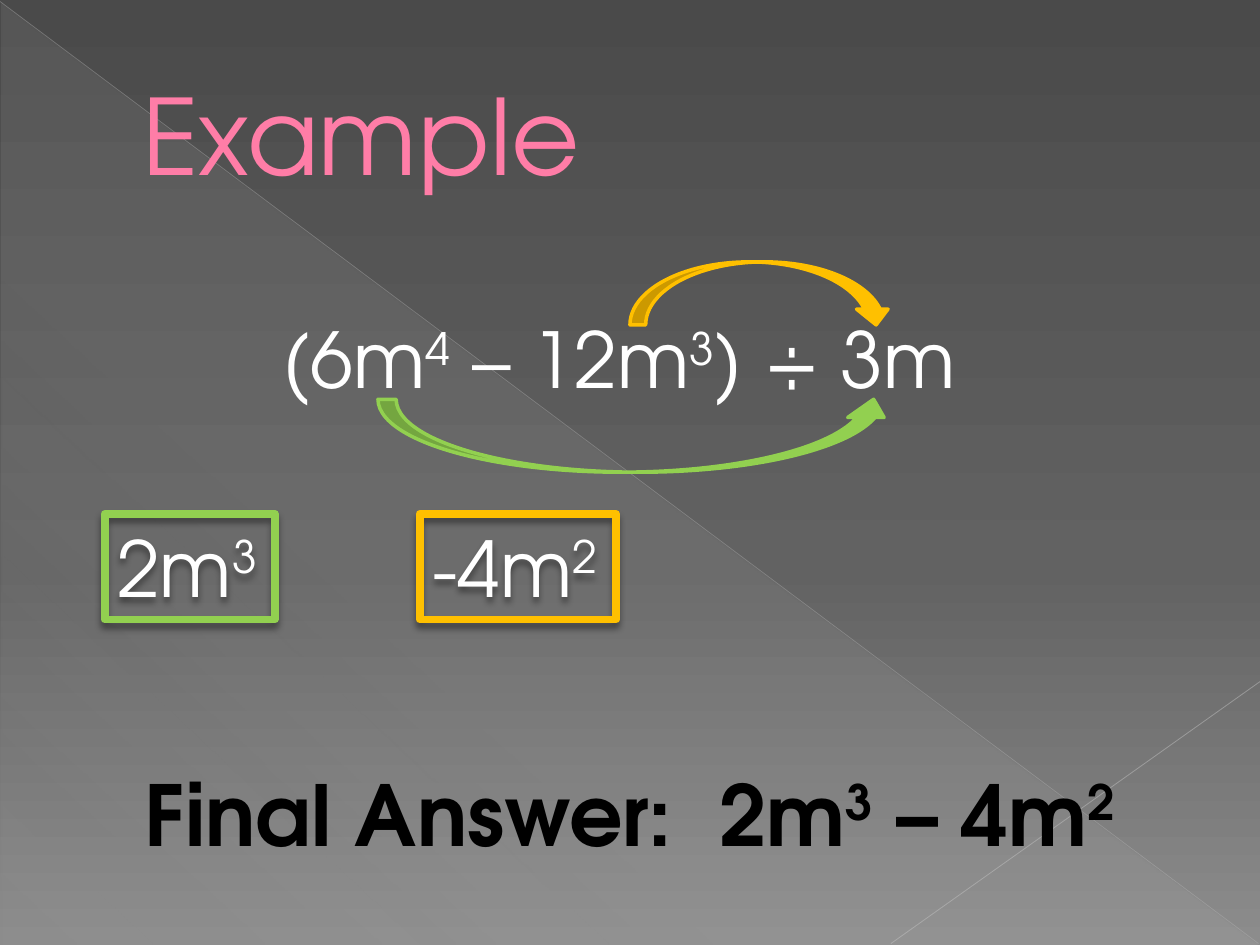
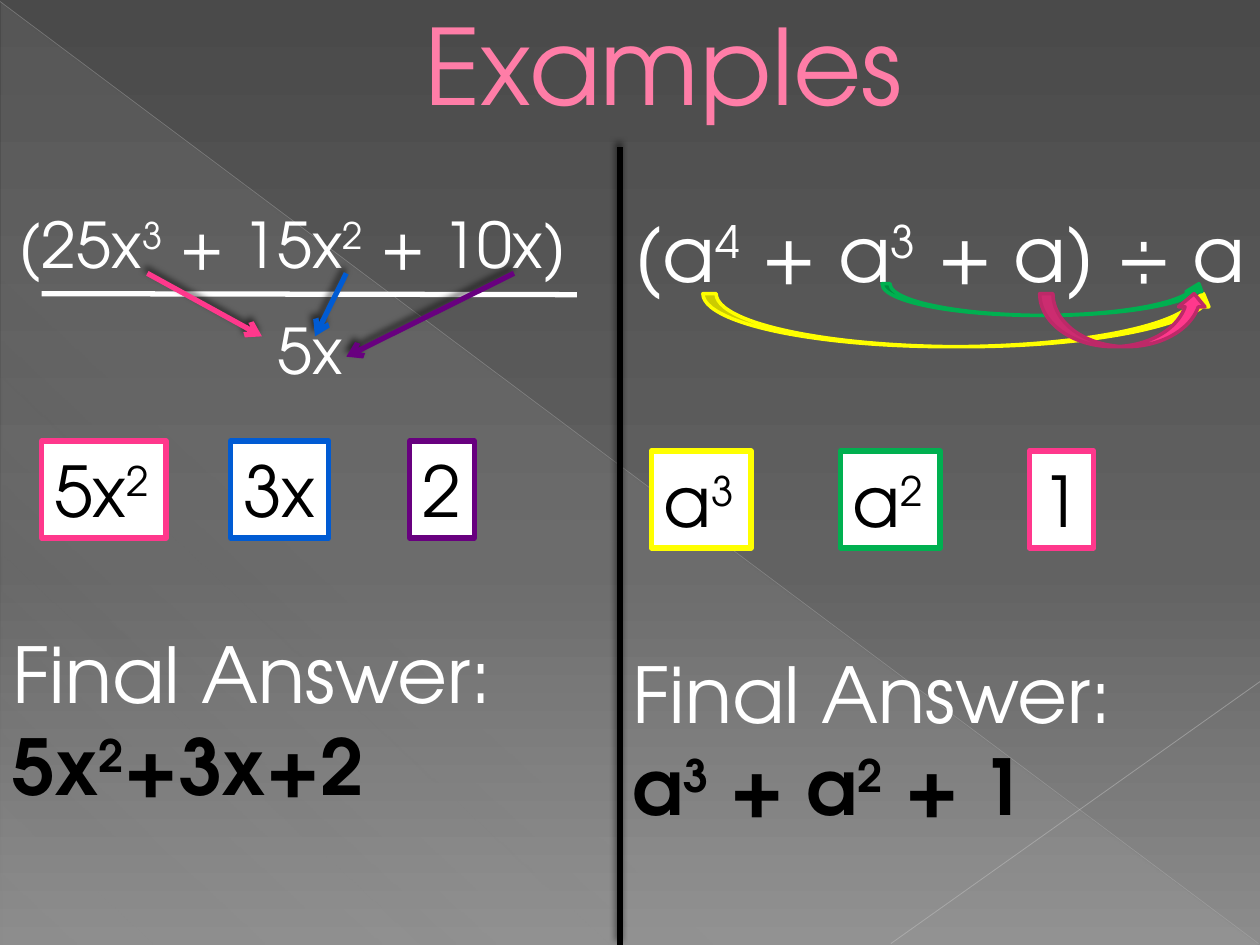
import pptx
import pptx.dml.color
import pptx.enum.dml
import pptx.enum.shapes
import pptx.enum.text
import pptx.oxml
import pptx.oxml.ns
import pptx.util

Cm, Pt = pptx.util.Cm, pptx.util.Pt
RGBColor = pptx.dml.color.RGBColor
Shape = pptx.enum.shapes.MSO_SHAPE
Align = pptx.enum.text.PP_ALIGN
AutoSize = pptx.enum.text.MSO_AUTO_SIZE

FONT = "TeX Gyre Adventor"
WHITE = RGBColor(0xFF, 0xFF, 0xFF)
BLACK = RGBColor(0x00, 0x00, 0x00)
TITLE_PINK = RGBColor(0xFF, 0x7D, 0xA7)
TITLE_EDGE = RGBColor(0xB1, 0x27, 0x61)
PINK = RGBColor(0xFF, 0x38, 0x8C)
DARK_PINK = RGBColor(0xBD, 0x29, 0x68)
LIME = RGBColor(0x92, 0xD0, 0x50)
AMBER = RGBColor(0xFF, 0xC0, 0x00)
YELLOW = RGBColor(0xFF, 0xFF, 0x00)
GREEN = RGBColor(0x00, 0xB0, 0x50)
BLUE = RGBColor(0x00, 0x5B, 0xD3)
PURPLE = RGBColor(0x68, 0x00, 0x7F)
LONG_EDGE = RGBColor(0xBF, 0xBF, 0xBF)
SHORT_EDGE = RGBColor(0xC6, 0xC6, 0xC6)
SHEEN = RGBColor(0xD2, 0xD2, 0xD2)
BACKDROP = [(0, RGBColor(0x4A, 0x4A, 0x4A), 100),
            (60, RGBColor(0x62, 0x62, 0x62), 100),
            (100, RGBColor(0x8C, 0x8C, 0x8C), 100)]
SHEEN_STOPS = [(0, SHEEN, 10), (70, SHEEN, 8), (100, SHEEN, 1)]

PAGE_WIDTH, PAGE_HEIGHT = 25.4, 19.05
MIDDLE = 12.5


def element(xml):
    """Parse a fragment that uses the a: prefix."""
    head, mark, rest = xml.partition(">")
    close = "/" if head.endswith("/") else ""
    head = head.removesuffix("/")
    return pptx.oxml.parse_xml(f"{head} {pptx.oxml.ns.nsdecls('a')}{close}{mark}{rest}")


def set_gradient(gradient, stops, angle):
    """Replace the stops, given as (percent, colour, opacity)."""
    stop_list, direction = gradient.xpath("./a:gsLst")[0], gradient.xpath("./a:lin")[0]
    for stop in list(stop_list):
        stop_list.remove(stop)
    for percent, colour, opacity in stops:
        stop_list.append(element(
            f'<a:gs pos="{percent * 1000}"><a:srgbClr val="{colour}">'
            f'<a:alpha val="{opacity * 1000}"/></a:srgbClr></a:gs>'))
    direction.set("ang", str(angle * 60000))


def set_shadow(item, opacity=0, angle=0):
    """Give the item a soft shadow, or none when opacity is 0."""
    shadow = ""
    if opacity:
        shadow = (f'<a:outerShdw blurRad="{Pt(4)}" dist="{Pt(3)}" dir="{angle * 60000}" '
                  f'rotWithShape="0"><a:srgbClr val="{BLACK}">'
                  f'<a:alpha val="{opacity * 1000}"/></a:srgbClr></a:outerShdw>')
    item._element.spPr.append(element(f"<a:effectLst>{shadow}</a:effectLst>"))


class Lesson:
    def __init__(self):
        self.deck = pptx.Presentation()
        self.deck.slide_width, self.deck.slide_height = Cm(PAGE_WIDTH), Cm(PAGE_HEIGHT)
        self.page = None
        master = self.deck.slide_master
        master.background.fill.gradient()
        set_gradient(master.element.xpath("./p:cSld/p:bg//a:gradFill")[0], BACKDROP, 90)

    def start_page(self, title, left, top, width, height, align=Align.LEFT):
        self.page = self.deck.slides.add_slide(self.deck.slide_layouts[5])
        self.backdrop()
        box = self.page.shapes.title
        self.page.shapes._spTree.append(box._element)
        box.left, box.top, box.width, box.height = map(Cm, (left, top, width, height))
        frame = box.text_frame
        frame.text = title
        frame.auto_size = AutoSize.NONE
        frame.vertical_anchor = pptx.enum.text.MSO_ANCHOR.MIDDLE
        para = frame.paragraphs[0]
        para.alignment = align
        properties = para._p.get_or_add_pPr()
        properties.set("marL", str(Cm(1.35)))
        properties.set("indent", "0")
        span = para.runs[0]
        self.style(span, 60, TITLE_PINK)
        span._r.get_or_add_rPr().insert(0, element(
            f'<a:ln w="{Pt(0.5)}"><a:solidFill><a:srgbClr val="{TITLE_EDGE}"/>'
            f'</a:solidFill></a:ln>'))

    def backdrop(self):
        triangle = self.page.shapes.add_shape(
            Shape.RIGHT_TRIANGLE, Cm(0.03), Cm(0.05), Cm(25.35), Cm(19))
        triangle.shadow.inherit = False
        triangle.line.fill.background()
        triangle.fill.gradient()
        set_gradient(triangle._element.xpath("./p:spPr/a:gradFill")[0], SHEEN_STOPS, 133)
        self.line((0, 0.03), (25.37, 19.02), LONG_EDGE, 0.39, opacity=35)
        self.line((PAGE_WIDTH, 13.74), (17.96, 19.02), SHORT_EDGE, 0.47, opacity=45)

    def style(self, span, size, colour, bold=False):
        span.font.name = FONT
        span.font.size = Pt(size)
        span.font.color.rgb = colour
        span.font.bold = bold

    def text(self, paras, left, top, width, height, size, align=Align.LEFT, wrap=True):
        """Write paragraphs of (text, colour, bold); ^ raises the next character."""
        box = self.page.shapes.add_textbox(Cm(left), Cm(top), Cm(width), Cm(height))
        frame = box.text_frame
        frame.word_wrap = wrap
        frame.auto_size = AutoSize.SHAPE_TO_FIT_TEXT
        for index, parts in enumerate(paras):
            para = frame.add_paragraph() if index else frame.paragraphs[0]
            para.alignment = align
            for content, colour, bold in parts:
                first, *raised = content.split("^")
                pieces = [(first, False)]
                for piece in raised:
                    pieces += [(piece[0], True), (piece[1:], False)]
                for piece, is_raised in pieces:
                    if not piece:
                        continue
                    span = para.add_run()
                    span.text = piece
                    self.style(span, size, colour, bold)
                    if is_raised:
                        span._r.get_or_add_rPr().set("baseline", "30000")
        return box

    def formula(self, content, left, top, width, height, size, colour=WHITE, bold=False):
        self.text([[(content, colour, bold)]], left, top, width, height, size, Align.CENTER)

    def term(self, content, left, top, width, height, border, size=40, colour=BLACK,
             fill=WHITE, weight=3):
        """Frame one term of the quotient."""
        box = self.text([[(content, colour, False)]], left, top, width, height, size, wrap=False)
        box.line.color.rgb = border
        box.line.width = Pt(weight)
        if fill is None:
            box.fill.background()
            set_shadow(box, 40, 90)
        else:
            box.fill.solid()
            box.fill.fore_color.rgb = fill

    def curved_arrow(self, left, top, width, height, colour, border=None,
                     kind=Shape.CURVED_UP_ARROW):
        arrow = self.page.shapes.add_shape(kind, Cm(left), Cm(top), Cm(width), Cm(height))
        arrow.shadow.inherit = False
        arrow.fill.solid()
        arrow.fill.fore_color.rgb = colour
        arrow.line.color.rgb = border or colour
        arrow.line.width = Pt(2)

    def line(self, start, end, colour, weight=3, opacity=100, arrow=False, shadow=False):
        line = self.page.shapes.add_connector(
            pptx.enum.shapes.MSO_CONNECTOR.STRAIGHT, *map(Cm, start + end))
        line.line.color.rgb = colour
        line.line.width = Pt(weight)
        outline = line._element.xpath("./p:spPr/a:ln")[0]
        if opacity < 100:
            outline.xpath(".//a:srgbClr")[0].append(
                element(f'<a:alpha val="{opacity * 1000}"/>'))
        if arrow:
            outline.append(element('<a:tailEnd type="arrow"/>'))
        set_shadow(line, 60 if shadow else 0, 245)


def single_example(lesson):
    lesson.start_page("Example", 1.27, 0.74, 22.86, 3.89)
    lesson.formula("(6m^4 – 12m^3) ÷ 3m ", 0, 6.15, PAGE_WIDTH, 2.13, 44)
    lesson.curved_arrow(7.62, 8.05, 10.36, 1.47, LIME)
    lesson.curved_arrow(12.7, 5.28, 5.28, 1.27, AMBER, kind=Shape.CURVED_DOWN_ARROW)
    for content, left, width, border in (("2m^3", 2.11, 3.43, LIME),
                                         ("-4m^2", 8.46, 3.96, AMBER)):
        lesson.term(content, left, 10.36, width, 2.13, border,
                    size=44, colour=WHITE, fill=None, weight=4.5)
    lesson.formula("Final Answer:  2m^3 – 4m^2", 0, 15.24, PAGE_WIDTH, 2.31, 48, BLACK, True)


def fraction_half(lesson):
    lesson.formula("(25x^3 + 15x^2 + 10x)  ", 0, 4.01, MIDDLE, 1.8, 36)
    lesson.line((0.84, 5.92), (11.63, 5.94), WHITE)
    lesson.formula("5x", 0, 6.15, MIDDLE, 1.8, 36)
    for start, end, content, left, width, colour in (
            ((2.97, 5.51), (5.28, 6.78), "5x^2", 0.84, 2.51, PINK),
            ((6.98, 5.51), (6.35, 6.78), "3x", 4.65, 1.98, BLUE),
            ((10.36, 5.51), (6.98, 7.19), "2", 8.26, 1.3, PURPLE)):
        lesson.line(start, end, colour, arrow=True, shadow=True)
        lesson.term(content, left, 8.89, width, 1.96, colour)
    lesson.text([[("Final Answer: ", WHITE, False), ("5x^2+3x+2", BLACK, True)]],
                0, 12.5, MIDDLE, 4.01, 44)


def division_half(lesson):
    lesson.formula("(a^4 + a^3 + a) ÷ a", MIDDLE, 4.01, 12.9, 2.13, 44)
    for index, (arrow, content, width, colour, border) in enumerate((
            ((14.17, 5.92, 10.36, 1.07), "a^3", 2.01, YELLOW, YELLOW),
            ((17.78, 5.72, 6.55, 0.64), "a^2", 2.01, GREEN, GREEN),
            ((20.96, 5.92, 3.38, 1.07), "1", 1.3, PINK, DARK_PINK))):
        lesson.curved_arrow(*arrow, colour, border)
        lesson.term(content, 13.13 + 3.81 * index, 9.09, width, 1.96, colour)
    lesson.text([[("Final Answer:", WHITE, False)], [("a^3 + a^2 + 1", BLACK, True)]],
                MIDDLE, 12.9, MIDDLE, 4.01, 44)


def paired_examples(lesson):
    lesson.start_page("Examples", 0, 0, PAGE_WIDTH, 2.54, Align.CENTER)
    lesson.line((MIDDLE, PAGE_HEIGHT), (MIDDLE, 2.97), BLACK, shadow=True)
    fraction_half(lesson)
    division_half(lesson)


def main():
    lesson = Lesson()
    single_example(lesson)
    paired_examples(lesson)
    lesson.deck.save("out.pptx")


if __name__ == "__main__":
    main()
